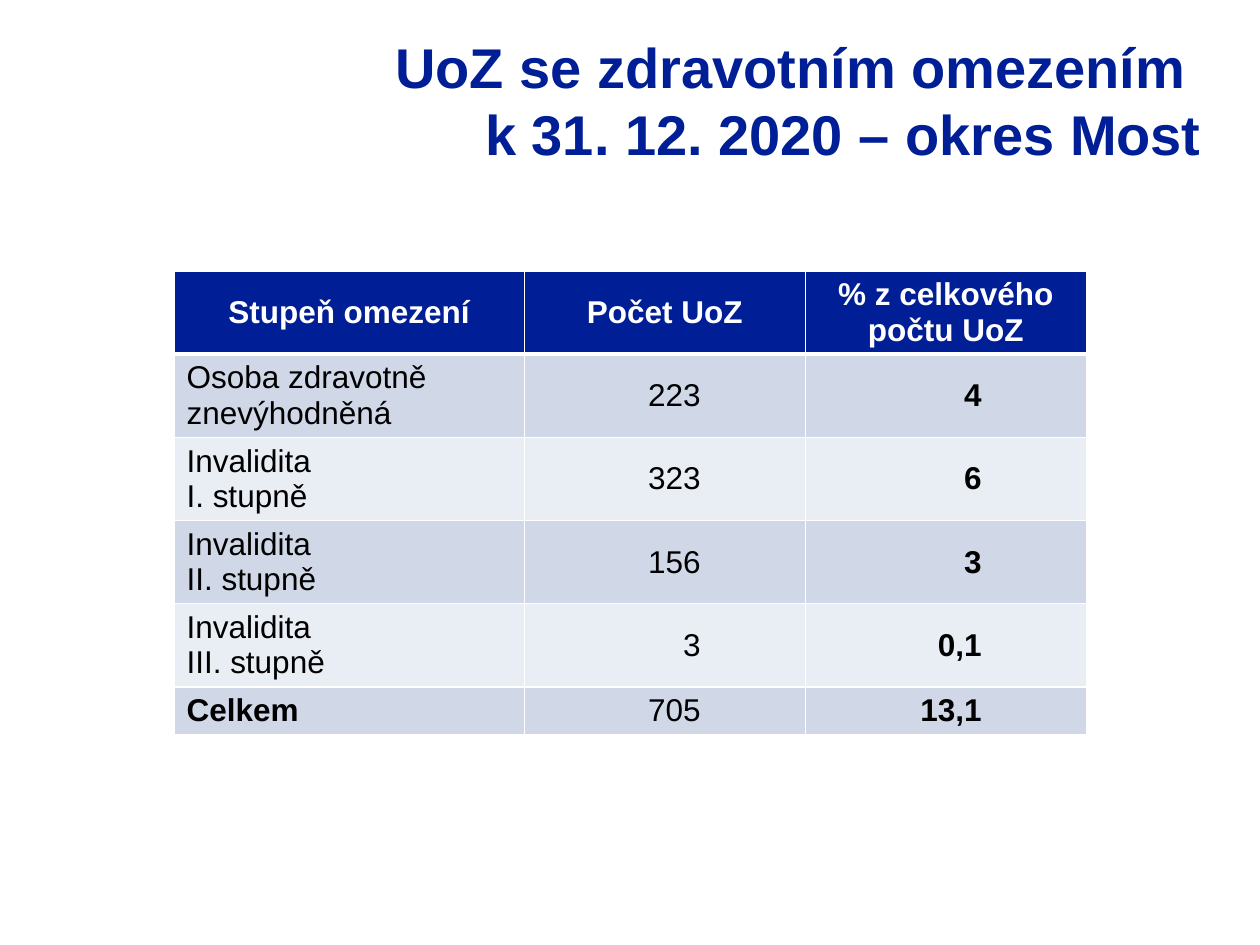
from dataclasses import dataclass

from lxml.etree import SubElement
from pptx import Presentation
from pptx.dml.color import RGBColor
from pptx.enum.text import MSO_ANCHOR as Anchor, MSO_AUTO_SIZE as Fit, PP_ALIGN as Align
from pptx.oxml.ns import qn
from pptx.slide import Slide
from pptx.table import _Cell as Cell
from pptx.util import Pt

NAVY = RGBColor(0x00, 0x1E, 0x96)
WHITE = RGBColor(0xFF, 0xFF, 0xFF)
BLACK = RGBColor(0x00, 0x00, 0x00)
BANDS = (RGBColor(0xD0, 0xD8, 0xE8), RGBColor(0xE9, 0xED, 0xF4))
FONT = "Arial"
WIDTHS = (200.2, 160.6, 160.6)
TALL, SHORT = 47.5, 27.5


@dataclass(frozen=True)
class Row:
    label: str
    count: str
    share: str
    total: bool = False


HEAD = ("Stupeň omezení", "Počet UoZ", "% z celkového počtu UoZ")
ROWS = (
    Row("Osoba zdravotně znevýhodněná", "223", "4"),
    Row("Invalidita \nI. stupně", "323", "6"),
    Row("Invalidita \nII. stupně", "156", "3"),
    Row("Invalidita \nIII. stupně", "3", "0,1"),
    Row("Celkem", "705", "13,1", total=True),
)


def add_text(para, text: str, size: float, color: RGBColor, bold: bool) -> None:
    for i, line in enumerate(text.split("\n")):
        if i:
            para.add_line_break()
        run = para.add_run()
        run.text = line
        font = run.font
        font.name, font.size, font.bold = FONT, Pt(size), bold
        font.color.rgb = color


def add_edges(cell: Cell, base: float) -> None:
    """Give the cell white borders; call before filling, as borders come first."""
    props = cell._tc.get_or_add_tcPr()
    for side, width in (("L", 1), ("R", 1), ("T", 1), ("B", base)):
        edge = SubElement(props, qn(f"a:ln{side}"), w=str(Pt(width)))
        fill = SubElement(edge, qn("a:solidFill"))
        SubElement(fill, qn("a:srgbClr"), val=str(WHITE))


def fill_cell(cell: Cell, text: str, fill: RGBColor, color: RGBColor,
              bold: bool, align: Align, base: float = 1) -> None:
    add_edges(cell, base)
    cell.fill.solid()
    cell.fill.fore_color.rgb = fill
    para = cell.text_frame.paragraphs[0]
    para.alignment = align
    add_text(para, text, 18, color, bold)
    if align != Align.LEFT:
        cell.vertical_anchor = Anchor.MIDDLE
    if align == Align.RIGHT:
        cell.margin_right = Pt(59.8)


def add_title(slide: Slide) -> None:
    title = slide.shapes.title
    title.left, title.top = Pt(172.8), Pt(15.1)
    title.width, title.height = Pt(521.3), Pt(108)
    frame = title.text_frame
    frame.word_wrap, frame.auto_size = True, Fit.NONE
    frame.vertical_anchor = Anchor.TOP
    lines = ("UoZ se zdravotním omezením ", "k 31. 12. 2020 – okres Most")
    for i, line in enumerate(lines):
        para = frame.add_paragraph() if i else frame.paragraphs[0]
        para.alignment = Align.RIGHT
        add_text(para, line, 32, NAVY, True)


def add_grid(slide: Slide) -> None:
    heights = [TALL] + [SHORT if row.total else TALL for row in ROWS]
    table = slide.shapes.add_table(
        len(heights), len(WIDTHS), Pt(99.4), Pt(154.8),
        Pt(sum(WIDTHS)), Pt(sum(heights))).table
    for col, width in zip(table.columns, WIDTHS):
        col.width = Pt(width)
    for line, height in zip(table.rows, heights):
        line.height = Pt(height)
    for c, text in enumerate(HEAD):
        fill_cell(table.cell(0, c), text, NAVY, WHITE, True, Align.CENTER, 3)
    for r, row in enumerate(ROWS, 1):
        fill = BANDS[(r - 1) % 2]
        parts = ((row.label, row.total, Align.LEFT),
                 (row.count, False, Align.RIGHT),
                 (row.share, True, Align.RIGHT))
        for c, (text, bold, align) in enumerate(parts):
            fill_cell(table.cell(r, c), text, fill, BLACK, bold, align)


def main() -> None:
    deck = Presentation()
    deck.slide_width, deck.slide_height = Pt(720), Pt(540)
    slide = deck.slides.add_slide(deck.slide_layouts[5])
    add_title(slide)
    add_grid(slide)
    deck.save("out.pptx")


if __name__ == "__main__":
    main()
